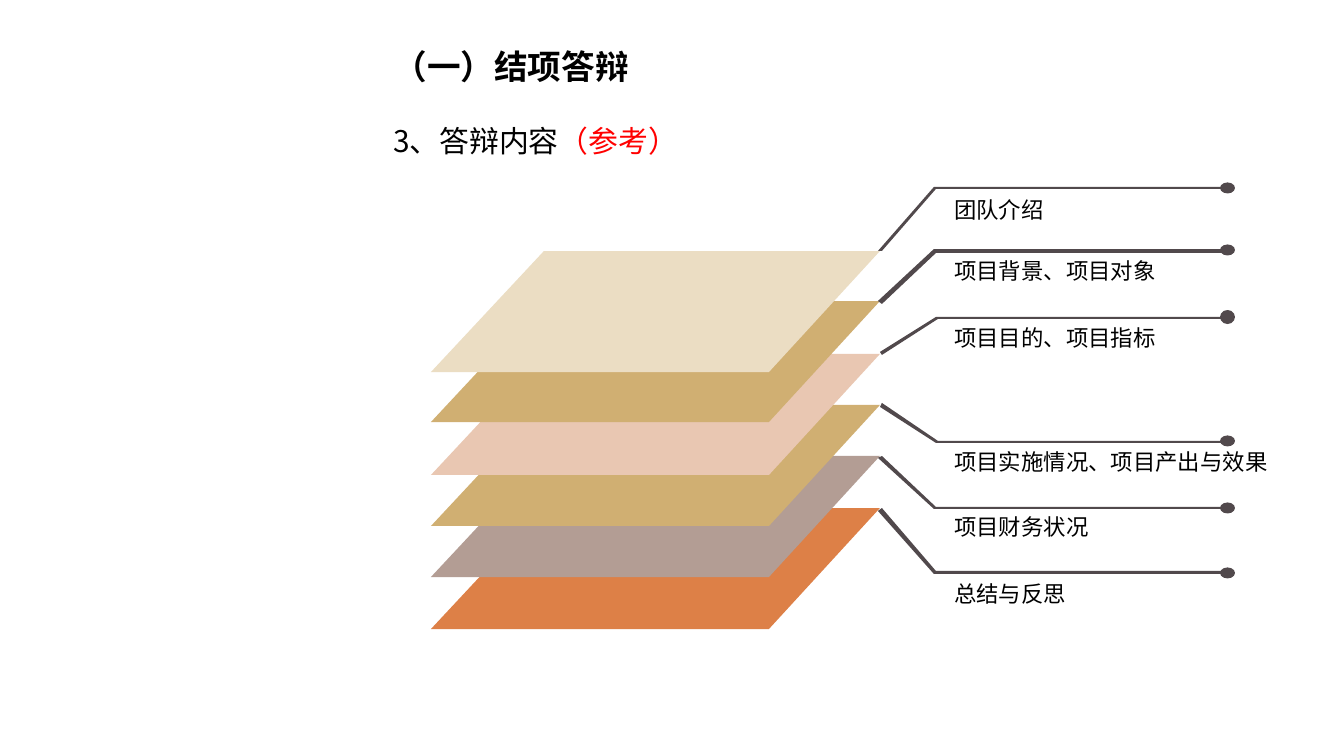
from pptx import Presentation
from pptx.dml.color import RGBColor
from pptx.enum.shapes import MSO_SHAPE
from pptx.enum.text import MSO_ANCHOR, MSO_AUTO_SIZE, PP_ALIGN
from pptx.oxml.ns import qn
from pptx.util import Emu, Pt

PX = 914400 / 134.4
FONT = "Noto Sans CJK SC"
BLACK, RED, LEADER_COLOR = "000000", "FF0000", "51494C"

# Heading paragraphs: runs of (text, size, bold, colour)
HEADING = [
    [("（一）结项答辩", 18, True, BLACK)],
    [("3、答辩内容", 16, False, BLACK), ("（参考）", 16, False, RED)],
]

# Layers, top to bottom. Leader: tip x, outer tip y, inner tip y,
# outer line y, inner line y. Dot: centre y, height. Label: top, width.
LAYERS = [
    dict(label="团队介绍", color="EBDDC3", top=251,
         leader=(878, 251, 251, 187, 189), dot=(188, 11), text=(190, 280)),
    dict(label="项目背景、项目对象", color="D0AF72", top=301,
         leader=(878, 301, 304, 249, 253), dot=(250, 11), text=(251, 280)),
    dict(label="项目目的、项目指标", color="E9C7B2", top=354,
         leader=(880, 352, 355, 317, 319), dot=(317, 14), text=(318, 280)),
    dict(label="项目实施情况、项目产出与效果", color="D0AF72", top=405,
         leader=(880, 407, 403, 443, 441), dot=(441, 11), text=(442, 352)),
    dict(label="项目财务状况", color="B39D94", top=456,
         leader=(878, 458, 456, 509, 507), dot=(508, 11), text=(507, 280)),
    dict(label="总结与反思", color="DD8047", top=508,
         leader=(878, 511, 508, 574, 571), dot=(573, 11), text=(574, 280)),
]
SHEET_HEIGHT = 121
INNER_TIP_X, LINE_END_X, ELBOW_RUN = 882, 1232, 56
DOT_LEFT, DOT_WIDTH = 1220, 15
LABEL_LEFT, LABEL_HEIGHT = 941, 40


def px(*lengths):
    return [Emu(round(length * PX)) for length in lengths]


def rgb(color):
    return RGBColor.from_string(color)


def paint(shape, color):
    shape.shadow.inherit = False
    shape.fill.solid()
    shape.fill.fore_color.rgb = rgb(color)
    shape.line.fill.background()


def add_polygon(slide, points, color):
    builder = slide.shapes.build_freeform(*points[0], scale=PX)
    builder.add_line_segments(points[1:], close=True)
    paint(builder.convert_to_shape(), color)


def add_run(paragraph, text, size, bold, color):
    run = paragraph.add_run()
    run.text = text
    font = run.font
    font.size, font.bold, font.name = Pt(size), bold, FONT
    font.color.rgb = rgb(color)
    east_asian = run._r.get_or_add_rPr().makeelement(qn("a:ea"), {"typeface": FONT})
    run._r.rPr.find(qn("a:latin")).addnext(east_asian)


presentation = Presentation()
presentation.slide_width, presentation.slide_height = px(1344, 756)
slide = presentation.slides.add_slide(presentation.slide_layouts[5])

# Heading
title = slide.shapes.title
title.left, title.top, title.width, title.height = px(380, -1, 371, 167)
frame = title.text_frame
frame.word_wrap = True
frame.auto_size = MSO_AUTO_SIZE.NONE
frame.vertical_anchor = MSO_ANCHOR.TOP
for index, runs in enumerate(HEADING):
    paragraph = frame.add_paragraph() if index else frame.paragraphs[0]
    paragraph.alignment = PP_ALIGN.LEFT
    paragraph.line_spacing = 2.0
    for run in runs:
        add_run(paragraph, *run)

# Stacked sheets, lowest first
for layer in reversed(LAYERS):
    top, bottom = layer["top"], layer["top"] + SHEET_HEIGHT
    add_polygon(slide, [(769, bottom), (431, bottom), (544, top), (880, top)],
                layer["color"])

# Leaders, dots and labels
for layer in LAYERS:
    tip_x, outer_tip, inner_tip, outer_line, inner_line = layer["leader"]
    elbow_x = tip_x + ELBOW_RUN
    add_polygon(slide, [
        (INNER_TIP_X, inner_tip), (tip_x, outer_tip), (elbow_x, outer_line),
        (LINE_END_X, outer_line), (LINE_END_X, inner_line),
        (elbow_x + 2, inner_line),
    ], LEADER_COLOR)

    center, height = layer["dot"]
    paint(slide.shapes.add_shape(
        MSO_SHAPE.OVAL, *px(DOT_LEFT, center - height / 2, DOT_WIDTH, height)),
        LEADER_COLOR)

    top, width = layer["text"]
    label = slide.shapes.add_textbox(*px(LABEL_LEFT, top, width, LABEL_HEIGHT))
    label.text_frame.word_wrap = True
    add_run(label.text_frame.paragraphs[0], layer["label"], 12, False, BLACK)

presentation.save("out.pptx")
